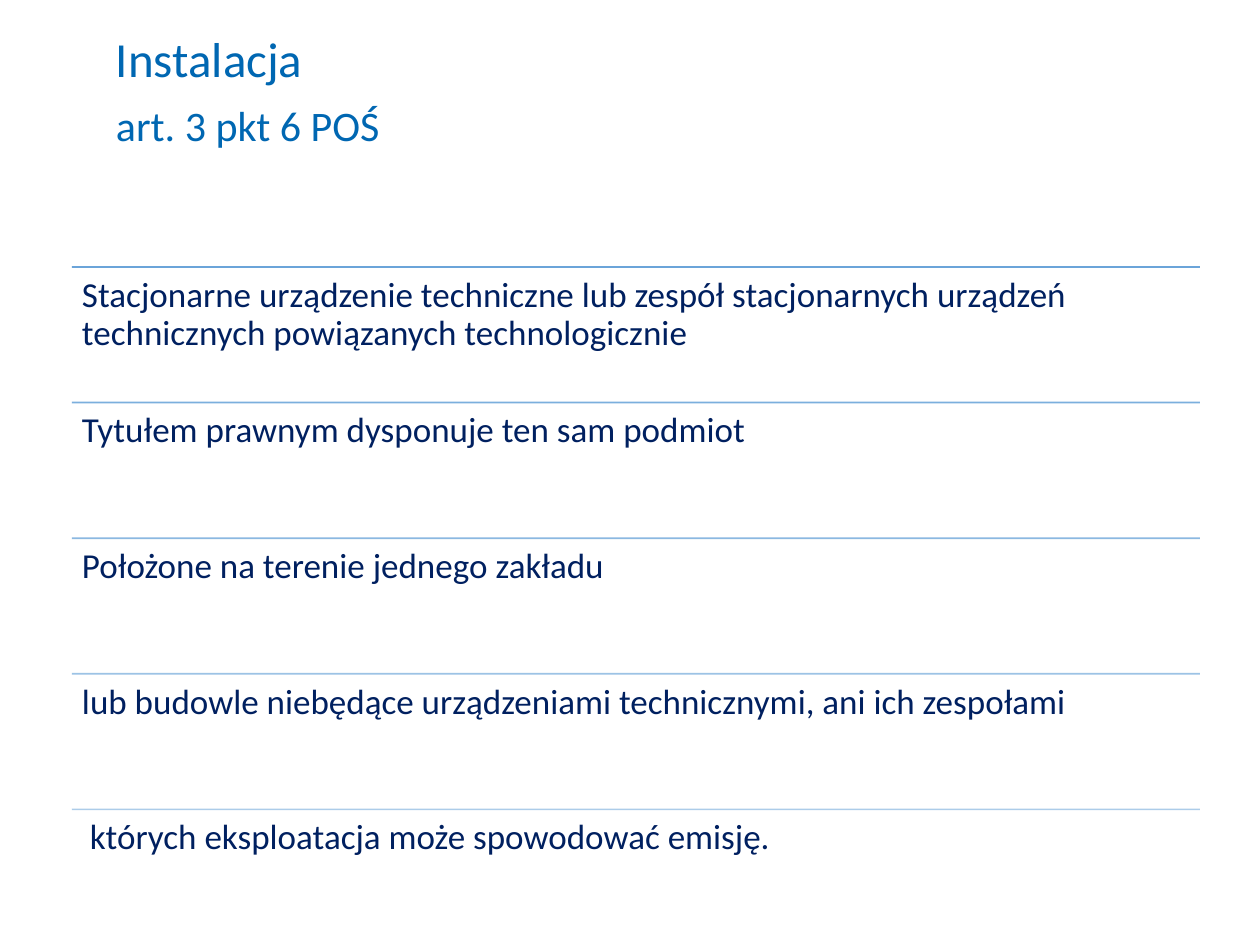
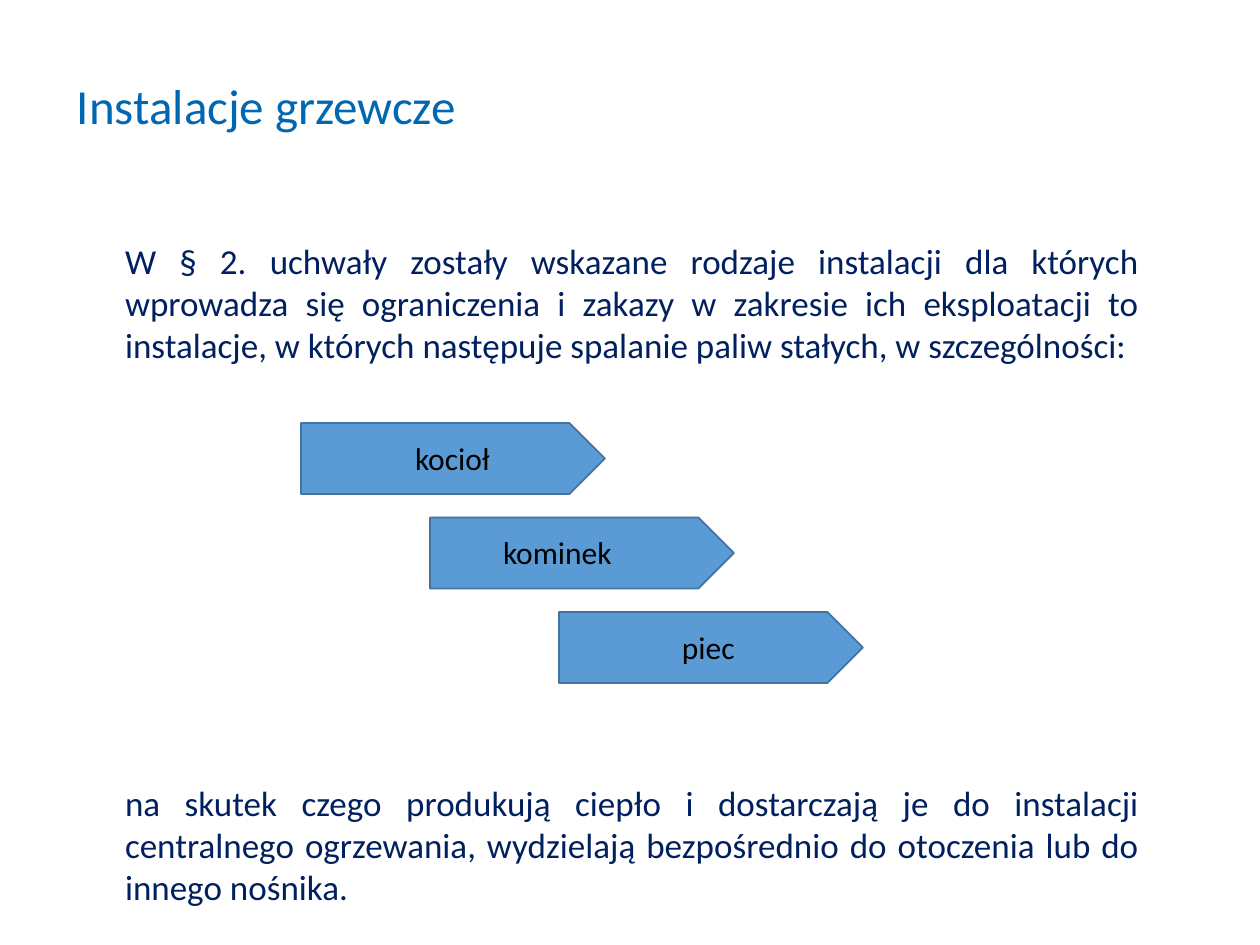
from collections import namedtuple

from lxml import etree
from pptx import Presentation
from pptx.dml.color import RGBColor
from pptx.enum.shapes import MSO_CONNECTOR as Connector, MSO_SHAPE as Shape
from pptx.enum.text import PP_ALIGN as Align
from pptx.oxml.ns import qn
from pptx.util import Pt

PX = 914400 / 126
TITLE_BLUE = RGBColor(0x00, 0x67, 0xB2)
NAVY = RGBColor(0x00, 0x20, 0x60)
ACCENT = RGBColor(0x5B, 0x9B, 0xD5)
ACCENT_EDGE = RGBColor(0x43, 0x73, 0x9E)
BLACK = RGBColor(0, 0, 0)
FONT = "Calibri"

Box = namedtuple("Box", "left top width height")
Stage = namedtuple("Stage", "text inset width")

TITLE_FORMAT = {"line_spacing": 0.9}
ROW_FORMAT = {"line_spacing": 0.9}
BODY_FORMAT = {"alignment": Align.JUSTIFY}

CONDITIONS = [
    "Stacjonarne urządzenie techniczne lub zespół stacjonarnych urządzeń "
    "technicznych powiązanych technologicznie",
    "Tytułem prawnym dysponuje ten sam podmiot",
    "Położone na terenie jednego zakładu",
    "lub budowle niebędące urządzeniami technicznymi, ani ich zespołami",
    " których eksploatacja może spowodować emisję.",
]
HEATING_INTRO = (
    "W § 2. uchwały zostały wskazane rodzaje instalacji dla których wprowadza się "
    "ograniczenia i zakazy w zakresie ich eksploatacji to instalacje, w których "
    "następuje spalanie paliw stałych, w szczególności:"
)
HEATING_RESULT = (
    "na skutek czego produkują ciepło i dostarczają je do instalacji centralnego "
    "ogrzewania, wydzielają bezpośrednio do otoczenia lub do innego nośnika."
)
HEATERS = [
    Stage("kocioł", 101, 104),
    Stage("kominek", 60, 182),
    Stage("piec", 110, 86),
]


def emu(*lengths):
    return [round(length * PX) for length in lengths]


def set_attributes(target, values):
    for name, value in values.items():
        setattr(target, name, value)


def add_text(slide, box, lines, color, layout=None, margins=(13, 6), gap=0):
    """Write (text, size) lines, with gap points between paragraphs."""
    frame = slide.shapes.add_textbox(*emu(*box)).text_frame
    side, edge = emu(*margins)
    set_attributes(frame, {
        "word_wrap": True,
        "margin_left": side, "margin_right": side,
        "margin_top": edge, "margin_bottom": edge,
    })
    for index, (text, size) in enumerate(lines):
        paragraph = frame.add_paragraph() if index else frame.paragraphs[0]
        set_attributes(paragraph, layout or {})
        if index:
            paragraph.space_before = Pt(gap)
        run = paragraph.add_run()
        run.text = text
        set_attributes(run.font, {"name": FONT, "size": Pt(size)})
        run.font.color.rgb = color


def add_title(slide, left, top, lines):
    add_text(slide, Box(left, top, 543, 59), lines, TITLE_BLUE,
             TITLE_FORMAT, margins=(0, 0), gap=10)


def add_rule(slide, left, top, width, opacity):
    rule = slide.shapes.add_connector(
        Connector.STRAIGHT, *emu(left, top, left + width, top))
    rule.line.width = Pt(1)
    rule.line.color.rgb = ACCENT
    color = next(rule.line._ln.iter(qn("a:srgbClr")))
    etree.SubElement(color, qn("a:alpha"), val=str(opacity * 1000))
    etree.SubElement(rule._element.spPr, qn("a:effectLst"))


def add_ruled_list(slide, box, items):
    """Stack equal rows, each under a rule fainter than the one above."""
    pitch = box.height / len(items)
    for index, item in enumerate(items):
        top = box.top + index * pitch
        add_rule(slide, box.left, top, box.width, 90 - 10 * index)
        add_text(slide, Box(box.left, top, box.width, pitch), [(item, 20)],
                 NAVY, ROW_FORMAT, margins=(10, 10))


def add_staircase(slide, box, stages):
    """Step the pointed plates evenly from top left to bottom right of the box."""
    width, height = 304, 71
    steps = len(stages) - 1
    for index, stage in enumerate(stages):
        left = box.left + index * (box.width - width) / steps
        top = box.top + index * (box.height - height) / steps
        plate = slide.shapes.add_shape(Shape.PENTAGON, *emu(left, top, width, height))
        plate.shadow.inherit = False
        plate.fill.solid()
        plate.fill.fore_color.rgb = ACCENT
        plate.line.color.rgb = ACCENT_EDGE
        plate.line.width = Pt(1)
        add_text(slide, Box(left + stage.inset, top + 10, stage.width, 50),
                 [(stage.text, 18)], BLACK)


def build_definition(slide):
    add_title(slide, 116, 35, [("Instalacja", 28), ("art. 3 pkt 6 POŚ", 24)])
    add_ruled_list(slide, Box(72, 267, 1128, 678), CONDITIONS)


def build_heating(slide):
    add_title(slide, 77, 82, [("Instalacje grzewcze", 28)])
    add_text(slide, Box(112, 233, 1040, 687),
             [(HEATING_INTRO, 20), (HEATING_RESULT, 20)],
             NAVY, BODY_FORMAT, gap=238)
    add_staircase(slide, Box(301, 423, 562, 260), HEATERS)


def main():
    deck = Presentation()
    deck.slide_width, deck.slide_height = emu(1260, 945)
    for build in (build_definition, build_heating):
        build(deck.slides.add_slide(deck.slide_layouts[6]))
    deck.save("out.pptx")


if __name__ == "__main__":
    main()
